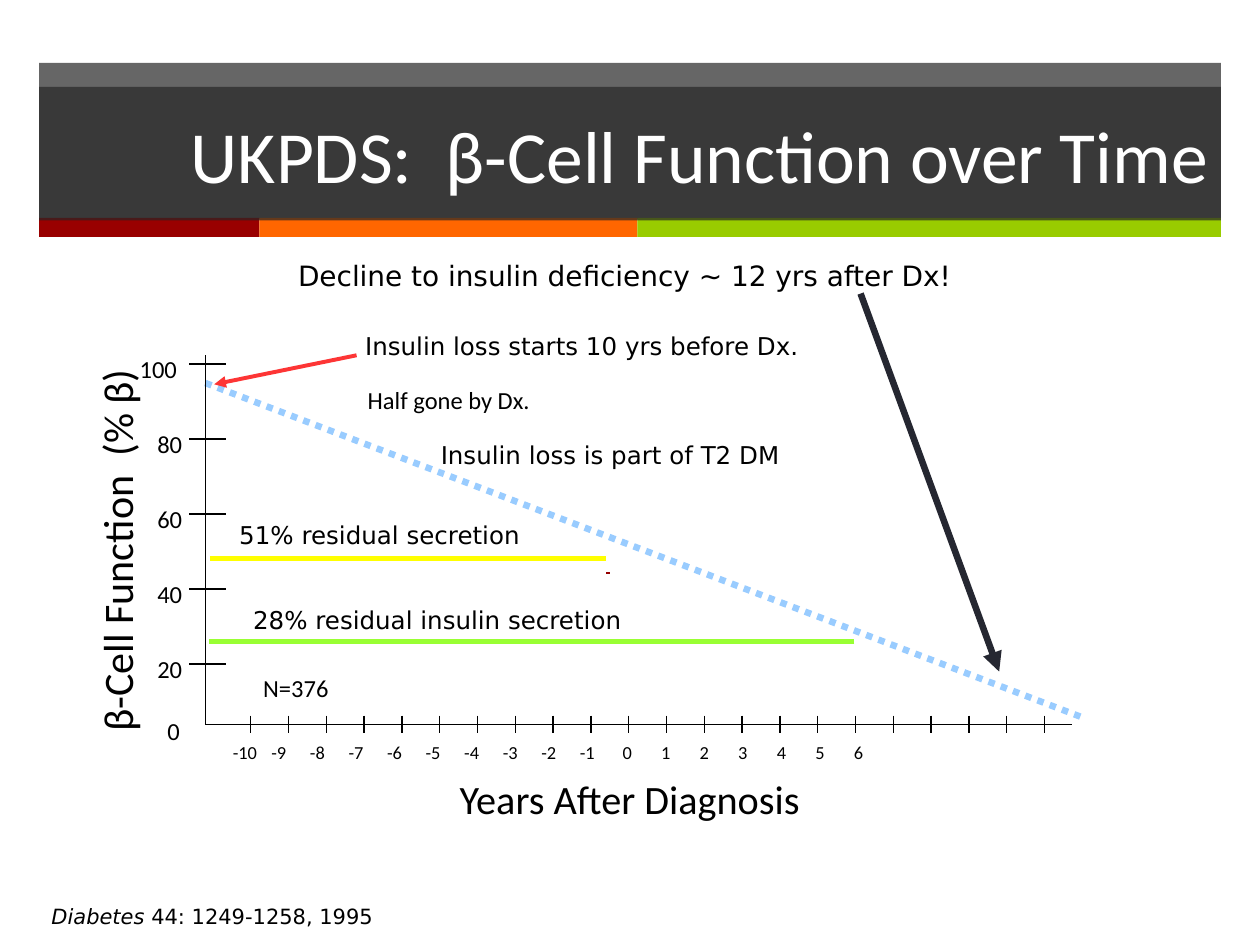
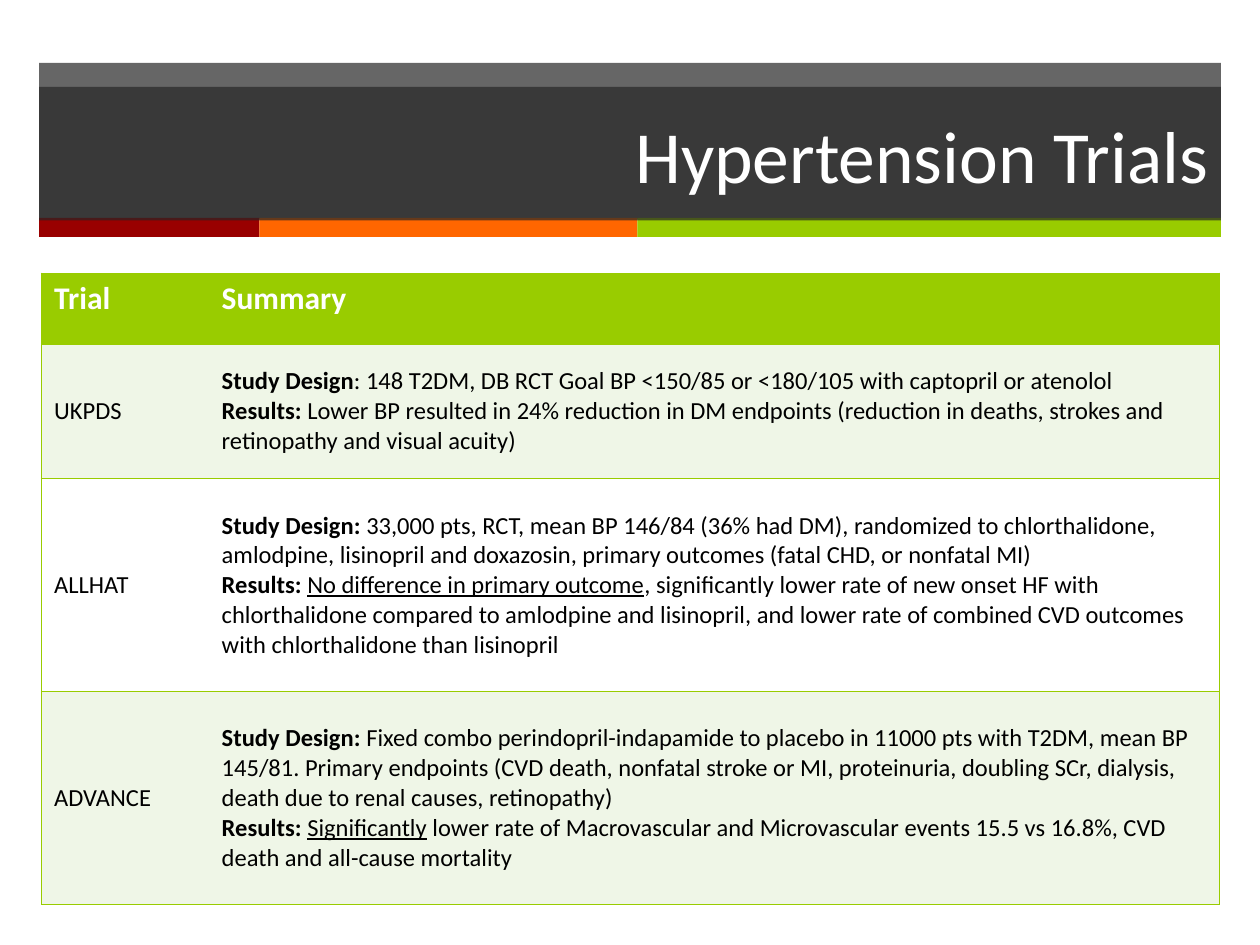
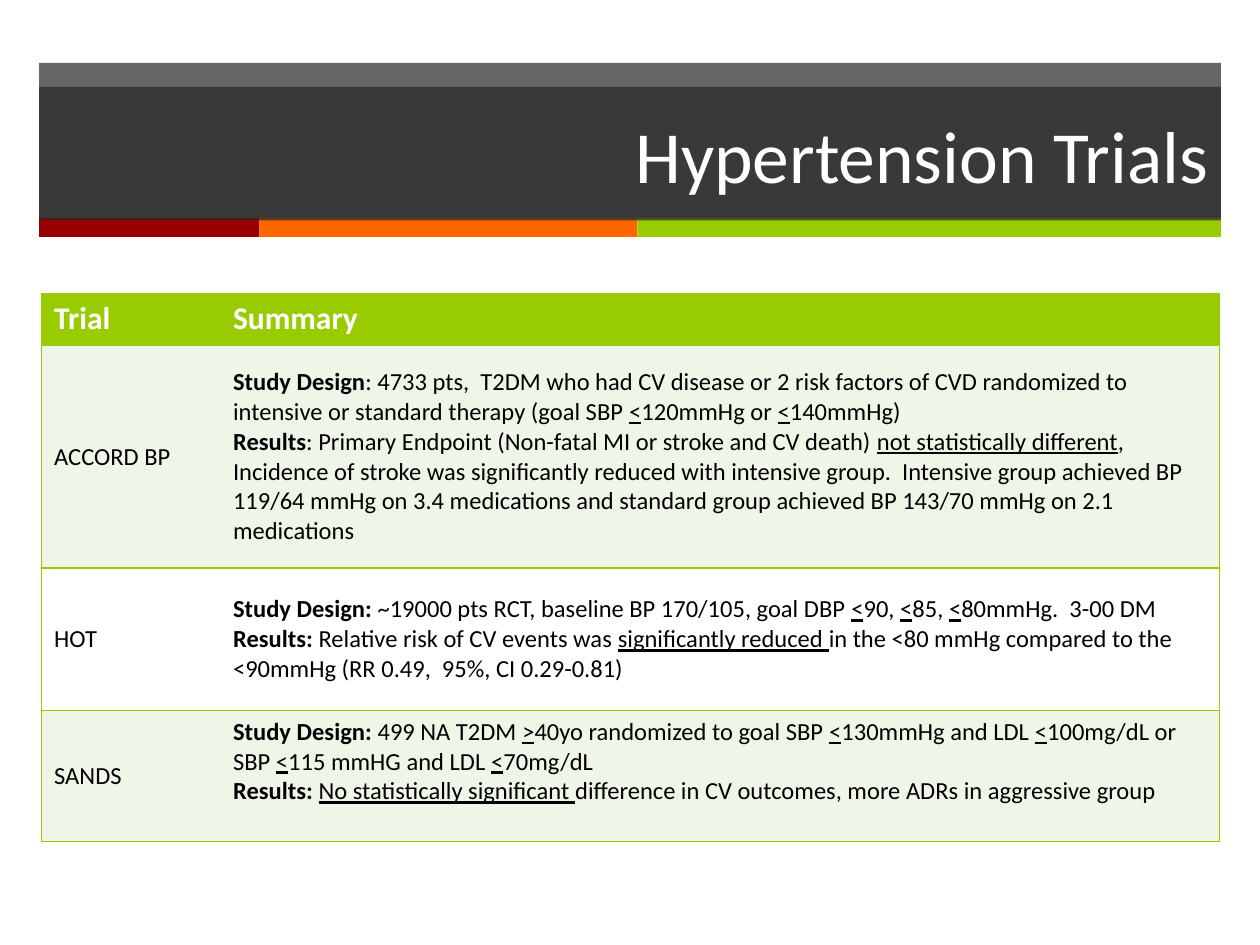
from dataclasses import dataclass

from lxml.etree import SubElement
from pptx import Presentation
from pptx.dml.color import RGBColor
from pptx.enum.dml import MSO_LINE
from pptx.enum.shapes import MSO_CONNECTOR, MSO_SHAPE
from pptx.enum.text import MSO_ANCHOR, MSO_AUTO_SIZE, PP_ALIGN
from pptx.oxml.ns import qn
from pptx.util import Inches, Pt

BLACK = RGBColor(0x00, 0x00, 0x00)
WHITE = RGBColor(0xFF, 0xFF, 0xFF)
CHARCOAL = RGBColor(0x26, 0x26, 0x26)
MAROON = RGBColor(0x99, 0x00, 0x00)
ORANGE = RGBColor(0xFF, 0x66, 0x00)
GREEN = RGBColor(0x99, 0xCC, 0x00)
PALE_GREEN = RGBColor(0xEF, 0xF6, 0xE7)
SKY = RGBColor(0x99, 0xCC, 0xFF)
YELLOW = RGBColor(0xFF, 0xFF, 0x00)
LIME = RGBColor(0x99, 0xFF, 0x33)
RED = RGBColor(0xFD, 0x35, 0x35)
NAVY = RGBColor(0x25, 0x27, 0x31)
DARK_RED = RGBColor(0x96, 0x00, 0x00)

BODY_FONT = "Calibri"
NOTE_FONT = "DejaVu Sans"
NO_GRID_STYLE = "{2D5ABB26-0587-4C30-8999-92F81FD0307C}"

BAND_LEFT, BAND_WIDTH = 0.31, 9.38
STRIPES = [(1.75, MAROON), (3, ORANGE), (4.63, GREEN)]


@dataclass
class Label:
    text: str
    left: float
    top: float
    width: float
    height: float
    size: float = 14
    font: str = BODY_FONT
    wrap: bool = False
    align: PP_ALIGN = PP_ALIGN.LEFT
    rotation: float = 0


@dataclass
class Line:
    start: tuple[float, float]
    end: tuple[float, float]
    color: RGBColor = BLACK
    width: float = 0.75
    dotted: bool = False
    arrow: bool = False


@dataclass
class Trial:
    """Asterisks enclose bold text, underscores enclose underlined text."""
    name: str
    design: str
    results: str
    height: float
    bottom_margin: float = 0.05


LABELS = [
    Label("Years After Diagnosis", 3.4, 6.1, 3.2, 0.4, 23, align=PP_ALIGN.CENTER),
    Label("β-Cell Function  (% β)", -1.04, 3.69, 3.93, 0.5, 24, rotation=270),
    Label("N=376", 1.99, 5.29, 0.88, 0.34),
    Label("51% residual secretion", 1.8, 4.08, 2.45, 0.33, font=NOTE_FONT),
    Label("28% residual insulin secretion", 1.91, 4.75, 3.15, 0.33, font=NOTE_FONT),
    Label("Decline to insulin deficiency ~ 12 yrs after Dx! ", 1.78, 2, 6.43, 0.37,
          16, NOTE_FONT, True, PP_ALIGN.CENTER),
    Label("Insulin loss starts 10 yrs before Dx.", 2.8, 2.58, 3.7, 0.33, font=NOTE_FONT),
    Label("Half gone by Dx.", 2.82, 3.01, 1.56, 0.34),
    Label("Insulin loss is part of T2 DM", 3.4, 3.44, 2.96, 0.57, font=NOTE_FONT),
]

LINES = [
    Line((1.63, 3.04), (8.58, 5.69), SKY, 3.75, dotted=True),
    Line((4.81, 4.43), (1.67, 4.43), YELLOW, 3),
    Line((6.78, 5.09), (1.66, 5.09), LIME, 3),
    Line((2.83, 2.82), (1.7, 3.05), RED, 2.25, arrow=True),
    Line((6.83, 2.33), (7.93, 5.33), NAVY, 3.75, arrow=True),
    Line((4.81, 4.55), (4.84, 4.55), DARK_RED, 1),
]

FIRST_TRIALS = [
    Trial("UKPDS",
          "*Study Design*: 148 T2DM, DB RCT Goal BP <150/85 or <180/105 with captopril "
          "or atenolol",
          "*Results: *Lower BP resulted in 24% reduction in DM endpoints (reduction in "
          "deaths, strokes and retinopathy and visual acuity)", 1.07),
    Trial("ALLHAT",
          "*Study Design: *33,000 pts, RCT, mean BP 146/84 (36% had DM), randomized to "
          "chlorthalidone, amlodpine, lisinopril and doxazosin, primary outcomes (fatal "
          "CHD, or nonfatal MI)",
          "*Results: *_No difference in primary outcome_, significantly lower rate of new "
          "onset HF with chlorthalidone compared to amlodpine and lisinopril, and lower "
          "rate of combined CVD outcomes with chlorthalidone than lisinopril", 1.69),
    Trial("ADVANCE",
          "*Study Design: *Fixed combo perindopril-indapamide to placebo in 11000 pts with "
          "T2DM, mean BP 145/81. Primary endpoints (CVD death, nonfatal stroke or MI, "
          "proteinuria, doubling SCr, dialysis, death due to renal causes, retinopathy)",
          "*Results: *_Significantly_ lower rate of Macrovascular and Microvascular events "
          "15.5 vs 16.8%, CVD death and all-cause mortality", 1.69),
]

SECOND_TRIALS = [
    Trial("ACCORD BP",
          "*Study Design*: 4733 pts,  T2DM who had CV disease or 2 risk factors of CVD "
          "randomized to intensive or standard therapy (goal SBP _<_120mmHg or _<_140mmHg)",
          "*Results*: Primary Endpoint (Non-fatal MI or stroke and CV death) _not "
          "statistically different_, Incidence of stroke was significantly reduced with "
          "intensive group.  Intensive group achieved BP 119/64 mmHg on 3.4 medications "
          "and standard group achieved BP 143/70 mmHg on 2.1 medications", 1.77),
    Trial("HOT",
          "*Study Design: *~19000 pts RCT, baseline BP 170/105, goal DBP _<_90, _<_85, "
          "_<_80mmHg.  3-00 DM",
          "*Results: *Relative risk of CV events was _significantly reduced _in the <80 "
          "mmHg compared to the <90mmHg (RR 0.49,  95%, CI 0.29-0.81)", 1.13),
    Trial("SANDS",
          "*Study Design: *499 NA T2DM _>_40yo randomized to goal SBP _<_130mmHg and LDL "
          "_<_100mg/dL or SBP _<_115 mmHG and LDL _<_70mg/dL",
          "*Results: *_No statistically significant _difference in CV outcomes, more ADRs "
          "in aggressive group", 1.04, bottom_margin=0.28),
]


def style_paragraph(p, size: float, color: RGBColor = BLACK, font: str = BODY_FONT) -> None:
    p.font.size = Pt(size)
    p.font.name = font
    p.font.color.rgb = color


def fill_shape(sp, color: RGBColor, alpha: int = 100) -> None:
    sp.fill.solid()
    sp.fill.fore_color.rgb = color
    if alpha < 100:
        rgb = sp.element.spPr.find(f"{qn('a:solidFill')}/{qn('a:srgbClr')}")
        SubElement(rgb, qn("a:alpha"), val=str(alpha * 1000))


def add_band(s, left: float, top: float, width: float, height: float,
             color: RGBColor, alpha: int = 100) -> None:
    sp = s.shapes.add_shape(MSO_SHAPE.RECTANGLE, Inches(left), Inches(top),
                            Inches(width), Inches(height))
    sp.shadow.inherit = False
    sp.line.fill.background()
    fill_shape(sp, color, alpha)


def add_titled_slide(prs, text: str):
    s = prs.slides.add_slide(prs.slide_layouts[5])
    add_band(s, BAND_LEFT, 0.5, BAND_WIDTH, 1.24, CHARCOAL, 70)
    left = BAND_LEFT
    for width, color in STRIPES:
        add_band(s, left, 1.73, width, 0.15, color)
        left += width

    title = s.shapes.title
    s.shapes.element.append(title.element)  # bring in front of the bands
    title.left, title.top = Inches(BAND_LEFT), Inches(0.69)
    title.width, title.height = Inches(BAND_WIDTH), Inches(1.06)
    fill_shape(title, CHARCOAL, 70)
    tf = title.text_frame
    tf.text = text
    tf.vertical_anchor = MSO_ANCHOR.MIDDLE
    tf.paragraphs[0].alignment = PP_ALIGN.RIGHT
    style_paragraph(tf.paragraphs[0], 42, WHITE)
    return s


def add_label(s, label: Label):
    sp = s.shapes.add_textbox(Inches(label.left), Inches(label.top),
                              Inches(label.width), Inches(label.height))
    sp.rotation = label.rotation
    tf = sp.text_frame
    tf.word_wrap = label.wrap
    tf.auto_size = MSO_AUTO_SIZE.SHAPE_TO_FIT_TEXT
    p = tf.paragraphs[0]
    p.alignment = label.align
    style_paragraph(p, label.size, font=label.font)
    p.add_run().text = label.text
    return p


def add_line(s, line: Line) -> None:
    c = s.shapes.add_connector(MSO_CONNECTOR.STRAIGHT, *map(Inches, line.start),
                               *map(Inches, line.end))
    c.line.color.rgb = line.color
    c.line.width = Pt(line.width)
    if line.dotted:
        c.line.dash_style = MSO_LINE.ROUND_DOT
    if line.arrow:
        SubElement(c.line._get_or_add_ln(), qn("a:tailEnd"), type="triangle")
    SubElement(c.element.spPr, qn("a:effectLst"))


def add_axes(s) -> None:
    add_line(s, Line((1.63, 2.82), (1.63, 5.75)))
    add_line(s, Line((1.63, 5.75), (8.51, 5.75)))
    for i in range(22):
        x = 1.99 + 0.3 * i
        add_line(s, Line((x, 5.68), (x, 5.82)))
    for i, year in enumerate(range(-10, 7)):
        text = str(year) if year < 0 else f" {year}"
        add_label(s, Label(text, 1.75 + 0.306 * i, 5.83, 0.42, 0.28, 10.5, wrap=True))

    add_label(s, Label("0", 1.23, 5.63, 0.47, 0.34, wrap=True))
    for i, percent in enumerate(range(20, 101, 20)):
        y = 5.27 - 0.595 * i
        add_line(s, Line((1.5, y), (1.79, y)))
        left, width = (1.15, 0.47) if percent < 100 else (1.01, 0.69)
        add_label(s, Label(str(percent), left, y - 0.13, width, 0.34, wrap=True))


def add_marked_runs(p, text: str) -> None:
    for i, part in enumerate(text.split("*")):
        for j, piece in enumerate(part.split("_")):
            if piece:
                r = p.add_run()
                r.text = piece
                r.font.bold = i % 2 == 1
                if j % 2:
                    r.font.underline = True


def format_cell(cell, texts: list[str], size: float, color: RGBColor,
                fill: RGBColor, sides: str) -> None:
    """Write one paragraph per text and rule the given sides (letters of LRTB)."""
    tc_pr = cell._tc.get_or_add_tcPr()
    for side in sides:
        ln = SubElement(tc_pr, qn(f"a:ln{side}"), w=str(Pt(1)))
        SubElement(SubElement(ln, qn("a:solidFill")), qn("a:srgbClr"), val=str(GREEN))
    cell.fill.solid()
    cell.fill.fore_color.rgb = fill
    tf = cell.text_frame
    for i, text in enumerate(texts):
        p = tf.add_paragraph() if i else tf.paragraphs[0]
        style_paragraph(p, size, color)
        add_marked_runs(p, text)


def add_trial_table(s, top: float, name_width: float, header_height: float,
                    trials: list[Trial]) -> None:
    heights = [header_height] + [trial.height for trial in trials]
    table = s.shapes.add_table(len(heights), 2, Inches(0.33), Inches(top),
                               Inches(9.35), Inches(sum(heights))).table
    table._tbl.tblPr.find(qn("a:tableStyleId")).text = NO_GRID_STYLE
    table.columns[0].width = Inches(name_width)
    table.columns[1].width = Inches(9.35 - name_width)
    for row, height in zip(table.rows, heights):
        row.height = Inches(height)

    for col, (heading, sides) in enumerate([("*Trial*", "LTB"), ("*Summary*", "RTB")]):
        format_cell(table.cell(0, col), [heading], 18, WHITE, GREEN, sides)
    for row, trial in enumerate(trials, 1):
        fill = PALE_GREEN if row % 2 else WHITE
        name, summary = table.cell(row, 0), table.cell(row, 1)
        format_cell(name, [trial.name], 14, BLACK, fill, "LTB")
        format_cell(summary, [trial.design, trial.results], 14, BLACK, fill, "RTB")
        name.vertical_anchor = summary.vertical_anchor = MSO_ANCHOR.MIDDLE
        summary.margin_bottom = Inches(trial.bottom_margin)


def add_beta_cell_slide(prs) -> None:
    s = add_titled_slide(prs, "UKPDS:  β-Cell Function over Time")
    citation = add_label(s, Label("Diabetes ", 0.31, 7.12, 2.82, 0.3, 12, NOTE_FONT))
    citation.runs[0].font.italic = True
    citation.add_run().text = "44: 1249-1258, 1995"
    for line in LINES:
        add_line(s, line)
    for label in LABELS:
        add_label(s, label)
    add_axes(s)


def main() -> None:
    prs = Presentation()
    prs.slide_width, prs.slide_height = Inches(10), Inches(7.5)
    add_beta_cell_slide(prs)
    add_trial_table(add_titled_slide(prs, "Hypertension Trials"), 2.17, 1.33, 0.56,
                    FIRST_TRIALS)
    add_trial_table(add_titled_slide(prs, "Hypertension Trials"), 2.33, 1.42, 0.41,
                    SECOND_TRIALS)
    prs.save("out.pptx")


if __name__ == "__main__":
    main()
